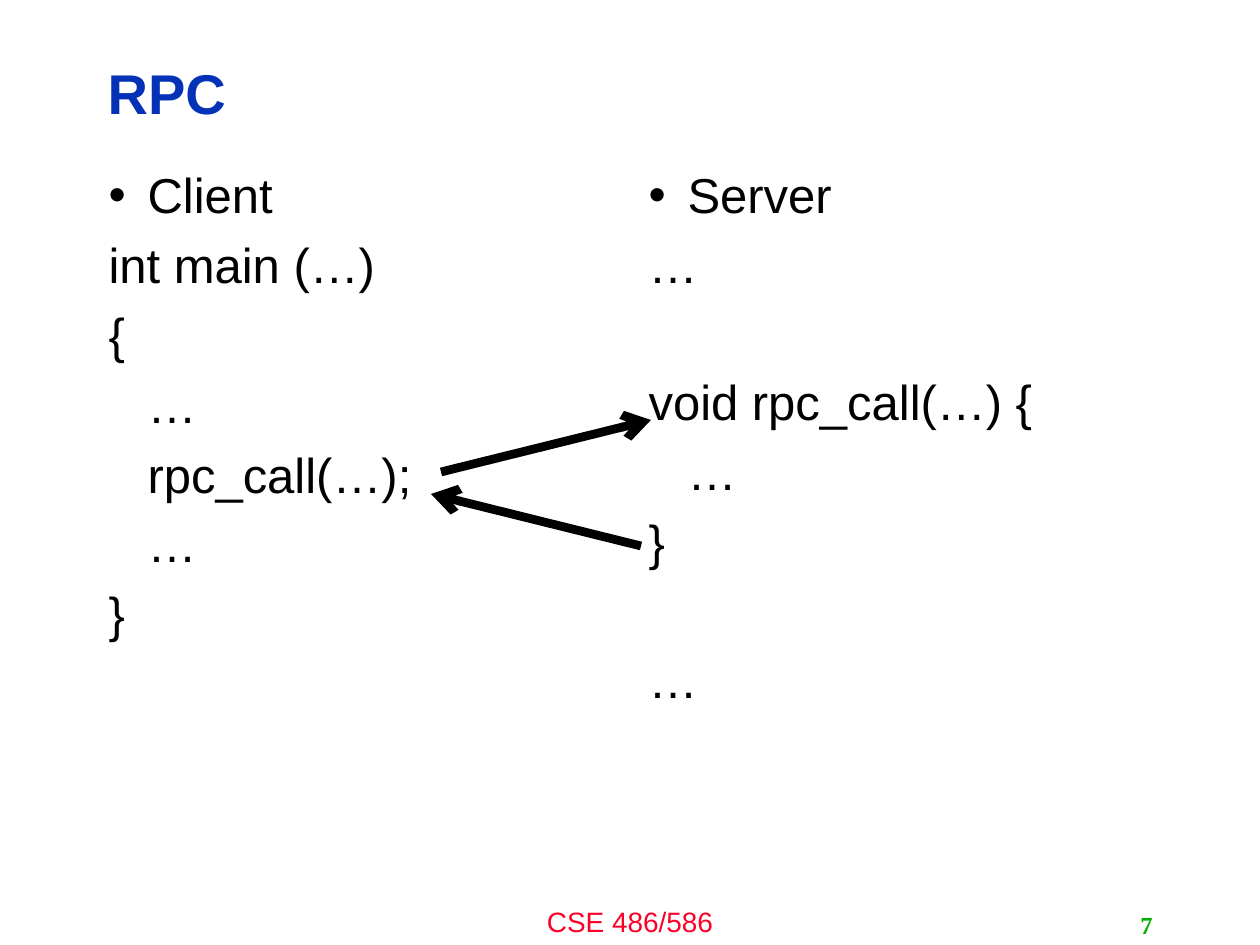
import pptx
import pptx.dml.color
import pptx.enum.shapes
import pptx.enum.text
import pptx.oxml
import pptx.oxml.ns
import pptx.util

ALIGN = pptx.enum.text.PP_ALIGN
ANCHOR = pptx.enum.text.MSO_ANCHOR
PX = 914400 / 126
INDENT = 39
LINE_GAP = 9.66
BLANK_LINE = 38.64
BLACK = "000000"

# Each line: text, kind, blank lines above
CLIENT = [("Client", "bullet", 0), ("int main (…)", "code", 0), ("{", "code", 0),
          ("…", "nested", 0), ("rpc_call(…);", "nested", 0), ("…", "nested", 0),
          ("}", "code", 0)]
SERVER = [("Server", "bullet", 0), ("…", "code", 0), ("void rpc_call(…) {", "code", 1),
          ("…", "nested", 0), ("}", "code", 0), ("…", "code", 1)]


def px(n):
    return pptx.util.Emu(round(n * PX))


def color(value):
    return pptx.dml.color.RGBColor.from_string(value)


def add_xml(parent, tag, **attrs):
    el = pptx.oxml.parse_xml(f"<a:{tag} {pptx.oxml.ns.nsdecls('a')}/>")
    for name, value in attrs.items():
        el.set(name, value)
    parent.append(el)


def place(sp, box):
    sp.left, sp.top, sp.width, sp.height = map(px, box)


def write(p, text, size=28, fill=BLACK, font="Arial", bold=False, align=ALIGN.LEFT):
    p.alignment = align
    r = p.add_run()
    r.text = text
    r.font.size = pptx.util.Pt(size)
    r.font.name = font
    r.font.bold = bold
    r.font.color.rgb = color(fill)


def setup_frame(sp, anchor):
    tf = sp.text_frame
    tf.word_wrap = True
    tf.auto_size = pptx.enum.text.MSO_AUTO_SIZE.NONE
    tf.vertical_anchor = anchor
    return tf


def add_title(sp, box, text):
    place(sp, box)
    p = setup_frame(sp, ANCHOR.MIDDLE).paragraphs[0]
    p.line_spacing = 0.9
    write(p, text, size=32, fill="0332B7", bold=True)


def add_code_column(sp, box, lines):
    place(sp, box)
    tf = setup_frame(sp, ANCHOR.TOP)
    for i, (text, kind, blanks) in enumerate(lines):
        p = tf.paragraphs[0] if i == 0 else tf.add_paragraph()
        pPr = p._p.get_or_add_pPr()
        pPr.set("marL", str(px(INDENT)))
        pPr.set("indent", str(0 if kind == "nested" else -px(INDENT)))
        if kind == "bullet":
            add_xml(pPr, "buChar", char="•")
        else:
            add_xml(pPr, "buNone")
        p.line_spacing = 0.9
        p.space_before = pptx.util.Pt(LINE_GAP + blanks * BLANK_LINE if i else 0)
        write(p, text)


def add_label(slide, box, text, anchor=ANCHOR.TOP, **fmt):
    sp = slide.shapes.add_textbox(*map(px, box))
    write(setup_frame(sp, anchor).paragraphs[0], text, **fmt)


def add_arrow(slide, start, end):
    line = slide.shapes.add_connector(pptx.enum.shapes.MSO_CONNECTOR.STRAIGHT,
                                      *map(px, start + end))
    line.line.color.rgb = color(BLACK)
    line.line.width = pptx.util.Pt(5)
    add_xml(line.line._get_or_add_ln(), "tailEnd", type="arrow")
    add_xml(line._element.spPr, "effectLst")


def add_call_arrows(slide, box):
    """Draw the call and the return between the two columns."""
    x, y, w, h = box
    rise, shift = 52, 10
    add_arrow(slide, (x + shift, y + rise), (x + w, y))
    add_arrow(slide, (x + w - shift, y + h), (x, y + h - rise))


def main():
    prs = pptx.Presentation()
    prs.slide_width, prs.slide_height = px(1260), px(945)
    slide = prs.slides.add_slide(prs.slide_layouts[3])
    title, client, server = slide.placeholders

    add_label(slide, (420, 898, 420, 47), "CSE 486/586", size=16, fill="FC0128",
              align=ALIGN.CENTER)
    add_title(title, (95, 45, 1005, 102), "RPC")
    for sp, x, lines in ((client, 96, CLIENT), (server, 636, SERVER)):
        add_code_column(sp, (x, 165, 519, 679), lines)
    add_label(slide, (903, 905, 262, 40), "7", anchor=ANCHOR.MIDDLE, size=14,
              fill="00AE00", font="Times New Roman", bold=True, align=ALIGN.RIGHT)
    add_call_arrows(slide, (431, 420, 220, 126))
    prs.save("out.pptx")


if __name__ == "__main__":
    main()
